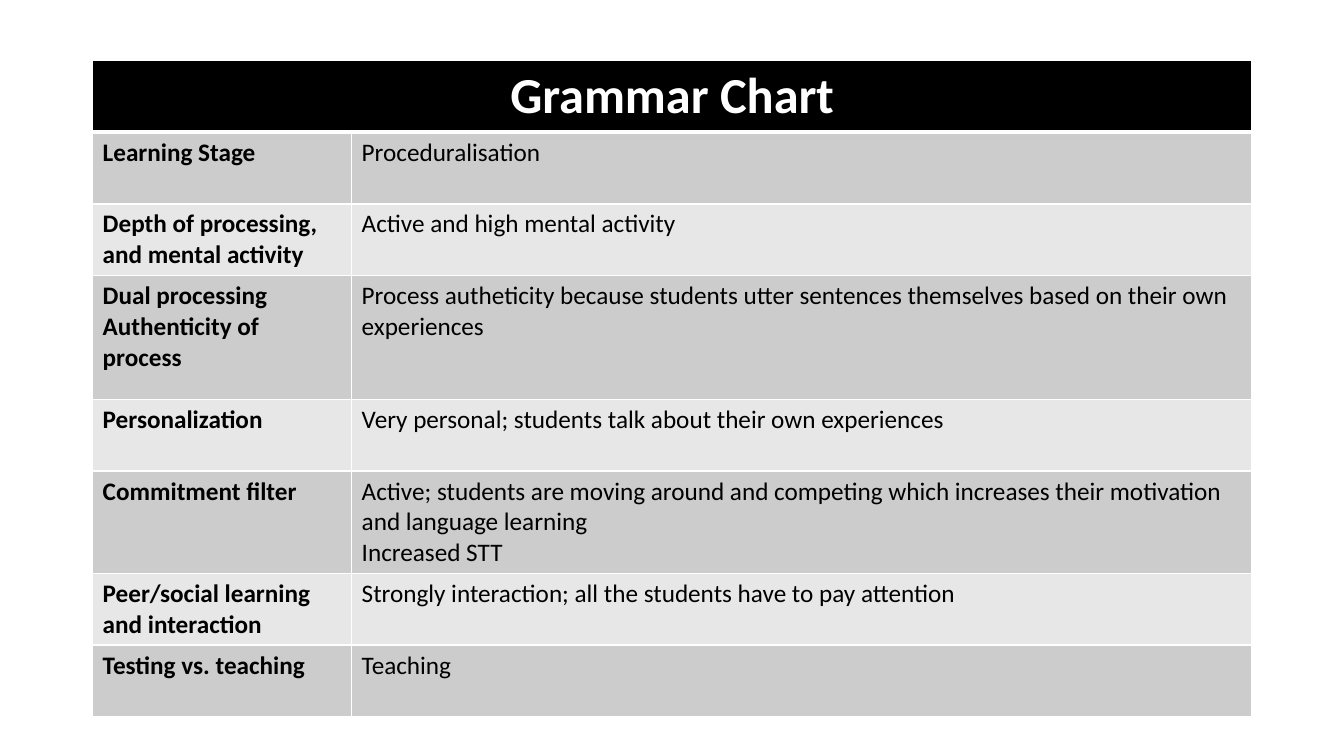
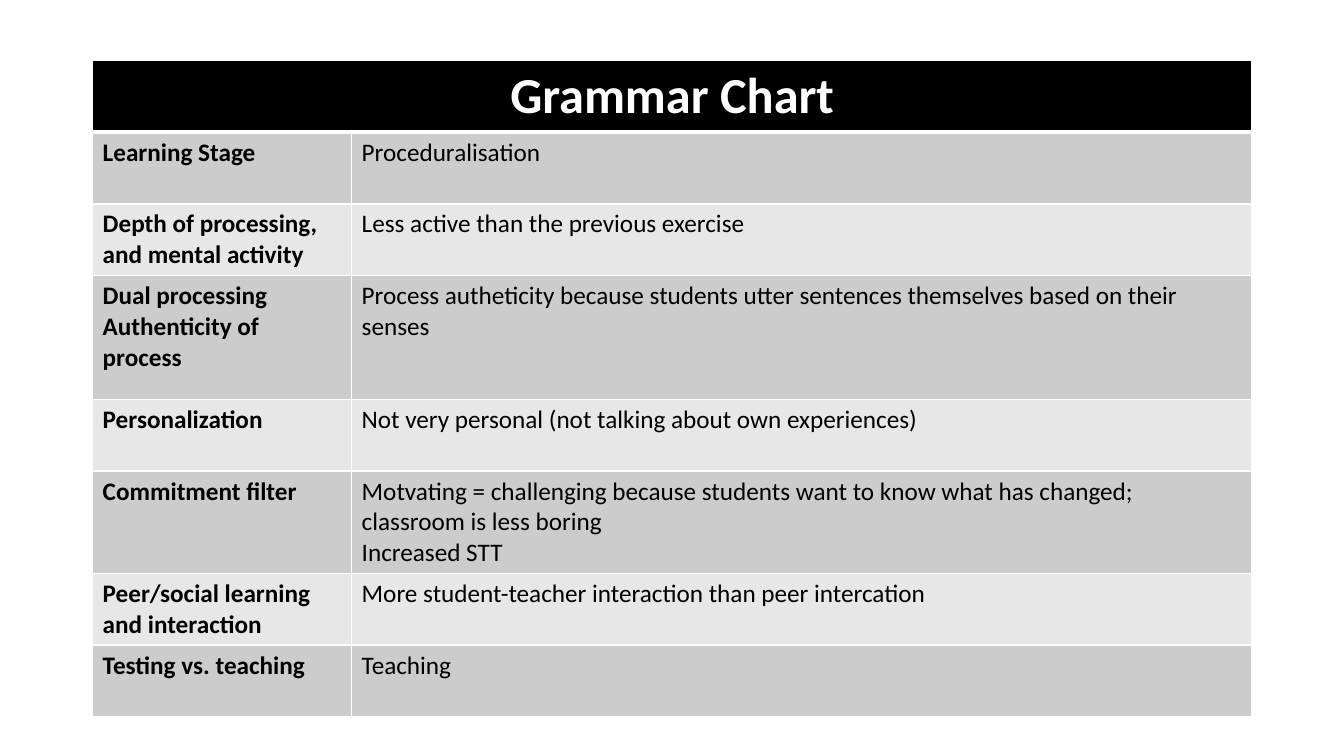
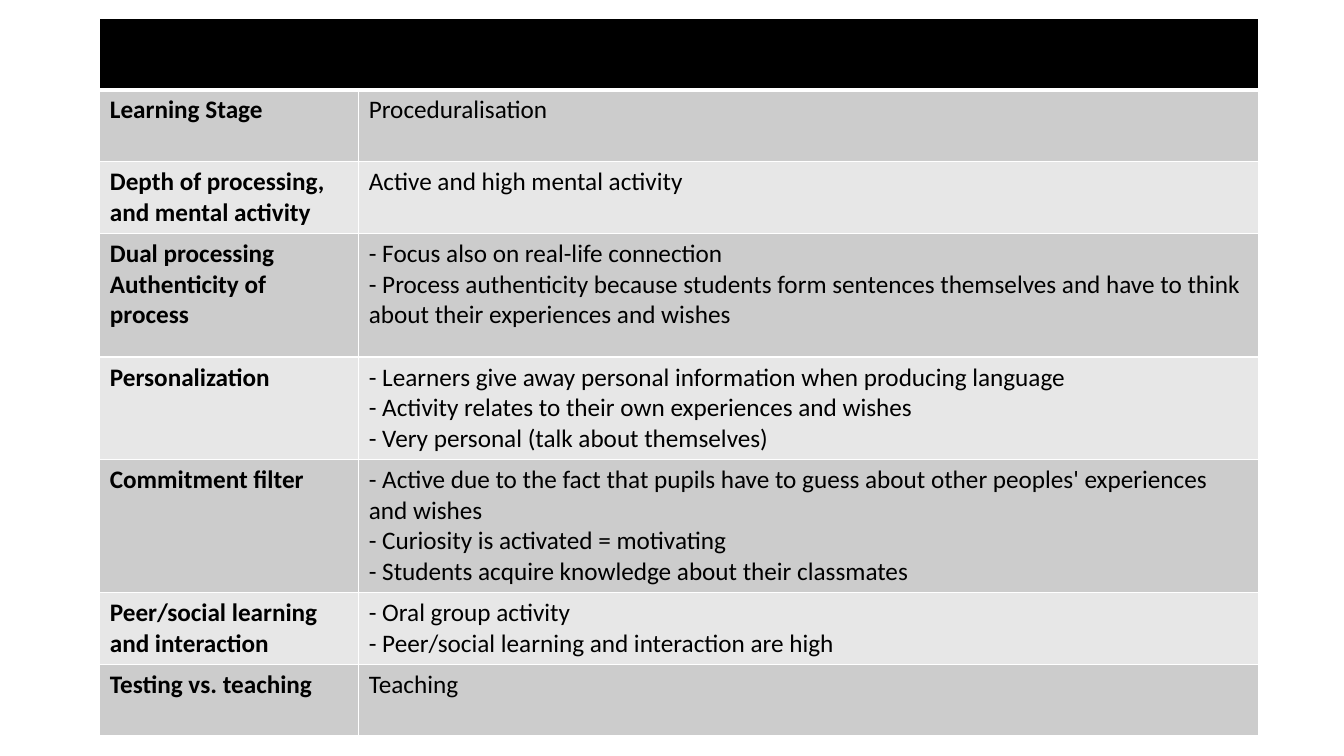
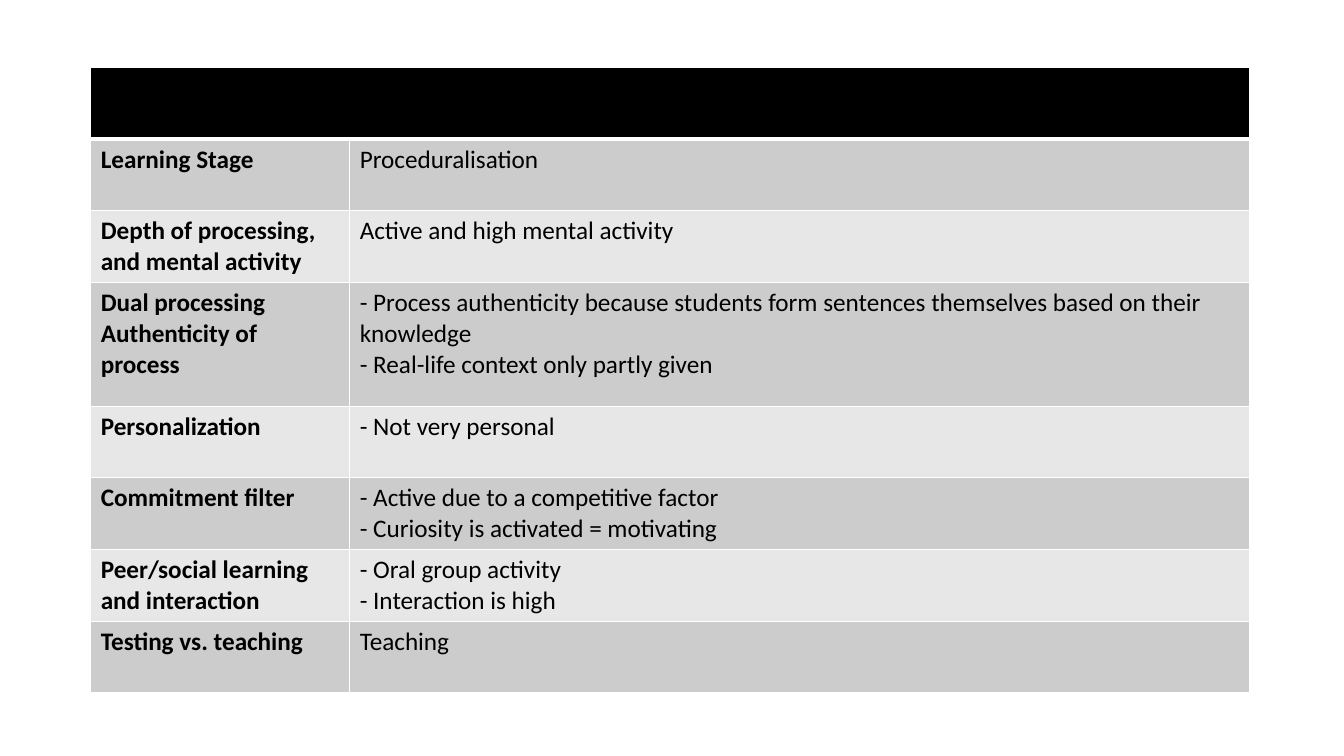
import pptx
import pptx.util
import pptx.dml.color
import pptx.enum.text
import pptx.oxml.ns
import lxml.etree
from dataclasses import dataclass

Pt = pptx.util.Pt


@dataclass(frozen=True)
class Theme:
    font: str = "Calibri"
    title_size: int = 36
    body_size: int = 18
    white: str = "FFFFFF"
    black: str = "000000"
    bands: tuple = ("CCCCCC", "E7E7E7")
    thin: int = 1
    thick: int = 3


WIDTH, HEIGHT = 960, 540
COLUMNS = (185, 643)
ROW, TALL_ROW = 51.2, 88.4
TALL_STAGE = "Dual processing\nAuthenticity of process"
STAGES = (
    "Learning Stage",
    "Depth of processing, and mental activity",
    TALL_STAGE,
    "Personalization",
    "Commitment filter",
    "Peer/social learning and interaction",
    "Testing vs. teaching",
)
CHARTS = (
    ("Grammar Chart", 66.2, 43.2, (
        "Proceduralisation",
        "Active and high mental activity",
        "Process autheticity because students utter sentences themselves based on their own experiences",
        "Very personal; students talk about their own experiences",
        "Active; students are moving around and competing which increases their motivation and language learning\n"
        "Increased STT",
        "Strongly interaction; all the students have to pay attention",
        "Teaching",
    )),
    ("Grammar Chart", 66.2, 43.2, (
        "Proceduralisation",
        "Less active than the previous exercise",
        "Process autheticity because students utter sentences themselves based on their senses",
        "Not very personal (not talking about own experiences)",
        "Motvating = challenging because students want to know what has changed; classroom is less boring\n"
        "Increased STT",
        "More student-teacher interaction than peer intercation",
        "Teaching",
    )),
    ("", 71.3, 13, (
        "Proceduralisation",
        "Active and high mental activity",
        "- Focus also on real-life connection\n"
        "- Process authenticity because students form sentences themselves and have to think "
        "about their experiences and wishes",
        "- Learners give away personal information when producing language\n"
        "- Activity relates to their own experiences and wishes\n"
        "- Very personal (talk about themselves)",
        "- Active due to the fact that pupils have to guess about other peoples' experiences and wishes\n"
        "- Curiosity is activated = motivating\n"
        "- Students acquire knowledge about their classmates",
        "- Oral group activity\n- Peer/social learning and interaction are high",
        "Teaching",
    )),
    ("", 64.8, 48.2, (
        "Proceduralisation",
        "Active and high mental activity",
        "- Process authenticity because students form sentences themselves based on their knowledge\n"
        "- Real-life context only partly given",
        "- Not very personal",
        "- Active due to a competitive factor\n- Curiosity is activated = motivating",
        "- Oral group activity\n- Interaction is high",
        "Teaching",
    )),
)


class Deck:
    def __init__(self, theme):
        self.theme = theme
        self.prs = pptx.Presentation()
        self.prs.slide_width = Pt(WIDTH)
        self.prs.slide_height = Pt(HEIGHT)
        self.s = None

    def slide(self):
        self.s = self.prs.slides.add_slide(self.prs.slide_layouts[6])

    def borders(self, cell, top, bottom):
        qn = pptx.oxml.ns.qn
        tc_pr = cell._tc.get_or_add_tcPr()
        thin = self.theme.thin
        for side, width in (("L", thin), ("R", thin), ("T", top), ("B", bottom)):
            ln = lxml.etree.SubElement(tc_pr, qn(f"a:ln{side}"), w=str(Pt(width)))
            fill = lxml.etree.SubElement(ln, qn("a:solidFill"))
            lxml.etree.SubElement(fill, qn("a:srgbClr"), val=self.theme.white)

    def cell(self, cell, text, fill, color, size, bold, top, bottom, align=None):
        rgb = pptx.dml.color.RGBColor.from_string
        self.borders(cell, top, bottom)
        cell.fill.solid()
        cell.fill.fore_color.rgb = rgb(fill)
        if not text:
            return
        tf = cell.text_frame
        tf.text = text
        for p in tf.paragraphs:
            p.alignment = align
            for r in p.runs:
                r.font.name = self.theme.font
                r.font.size = Pt(size)
                r.font.bold = bold
                r.font.color.rgb = rgb(color)

    def chart_table(self, title, left, top, answers):
        t = self.theme
        heights = [ROW] + [TALL_ROW if stage == TALL_STAGE else ROW for stage in STAGES]
        tbl = self.s.shapes.add_table(
            len(heights), len(COLUMNS), Pt(left), Pt(top), Pt(sum(COLUMNS)), Pt(sum(heights))
        ).table
        tbl.first_row = tbl.horz_banding = False
        for column, width in zip(tbl.columns, COLUMNS):
            column.width = Pt(width)
        for row, height in zip(tbl.rows, heights):
            row.height = Pt(height)
        for i, text in enumerate((title, "")):
            self.cell(tbl.cell(0, i), text, t.black, t.white, t.title_size, True,
                      t.thin, t.thick, pptx.enum.text.PP_ALIGN.CENTER)
        tbl.cell(0, 0).merge(tbl.cell(0, 1))
        for i, pair in enumerate(zip(STAGES, answers)):
            edge = t.thin if i else t.thick
            for j, text in enumerate(pair):
                self.cell(tbl.cell(i + 1, j), text, t.bands[i % 2], t.black,
                          t.body_size, j == 0, edge, t.thin)


def main():
    deck = Deck(Theme())
    for chart in CHARTS:
        deck.slide()
        deck.chart_table(*chart)
    deck.prs.save("out.pptx")


if __name__ == "__main__":
    main()
